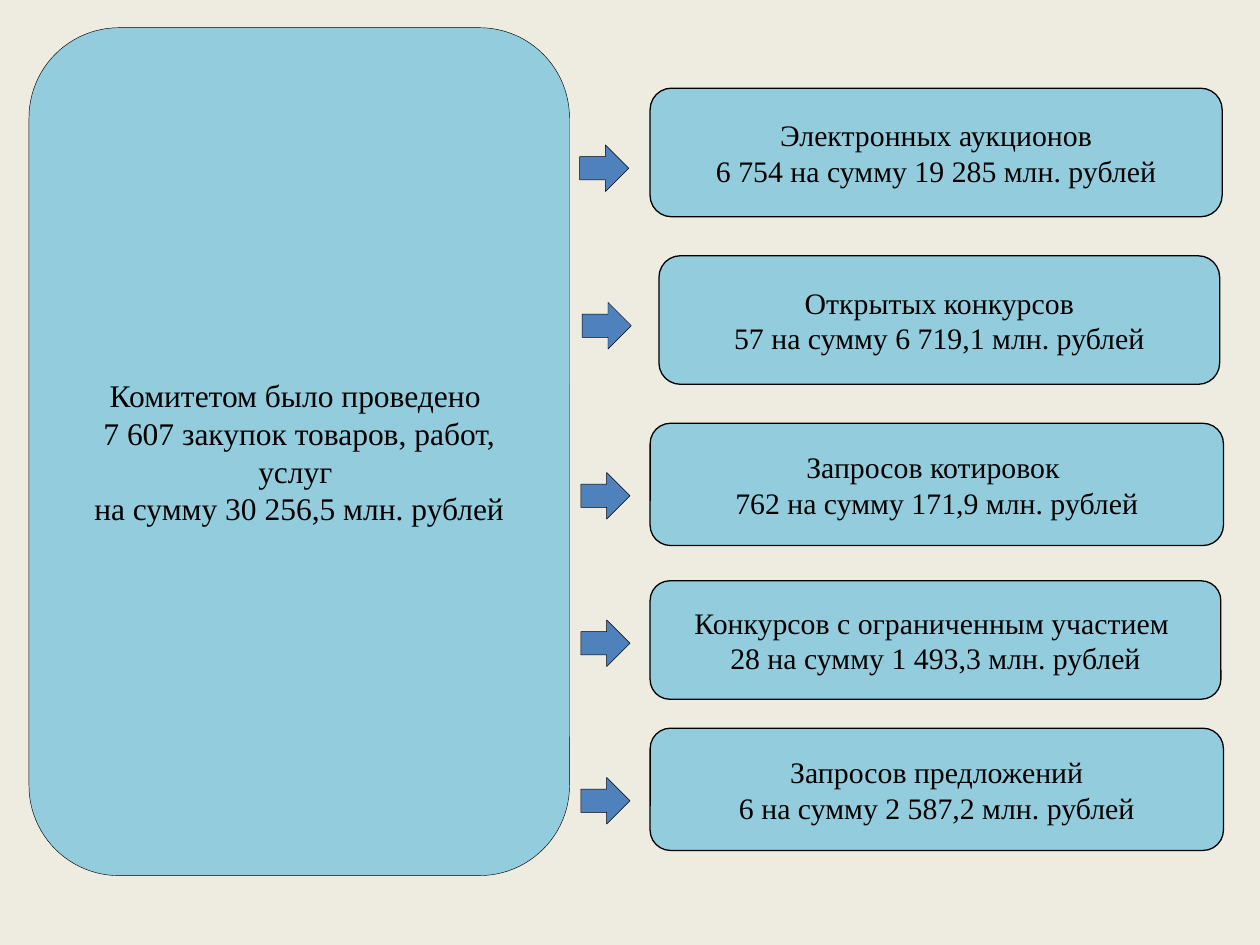
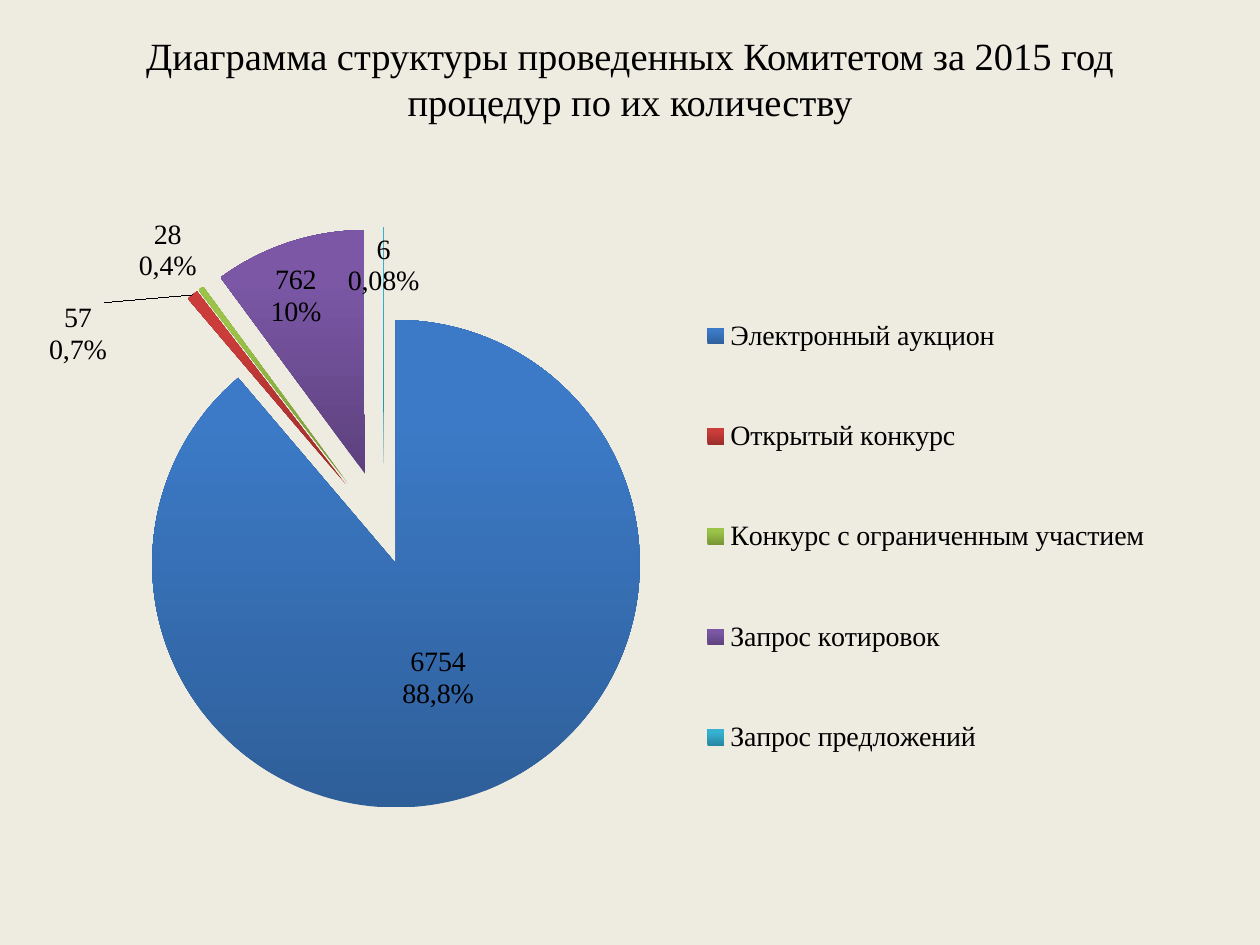
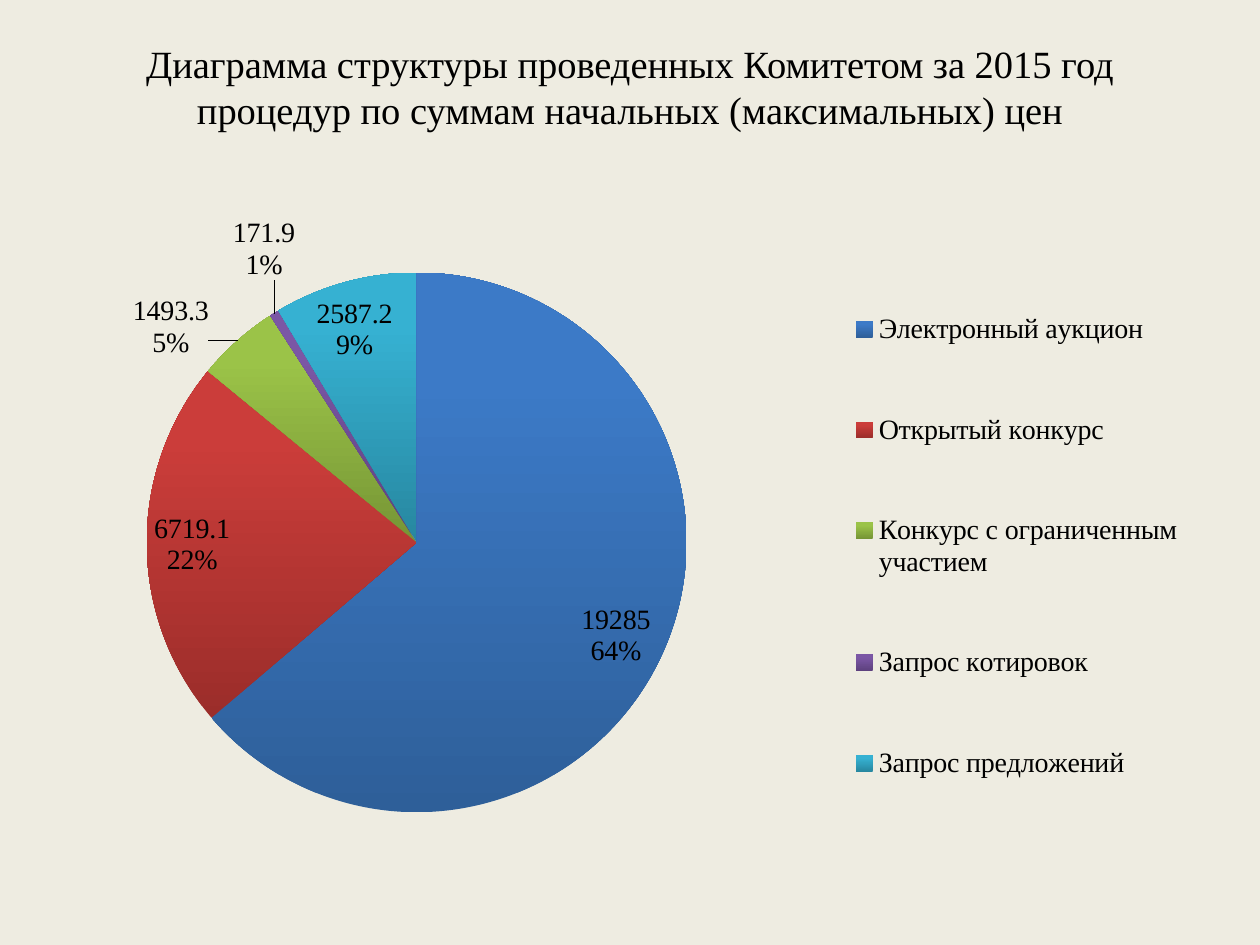
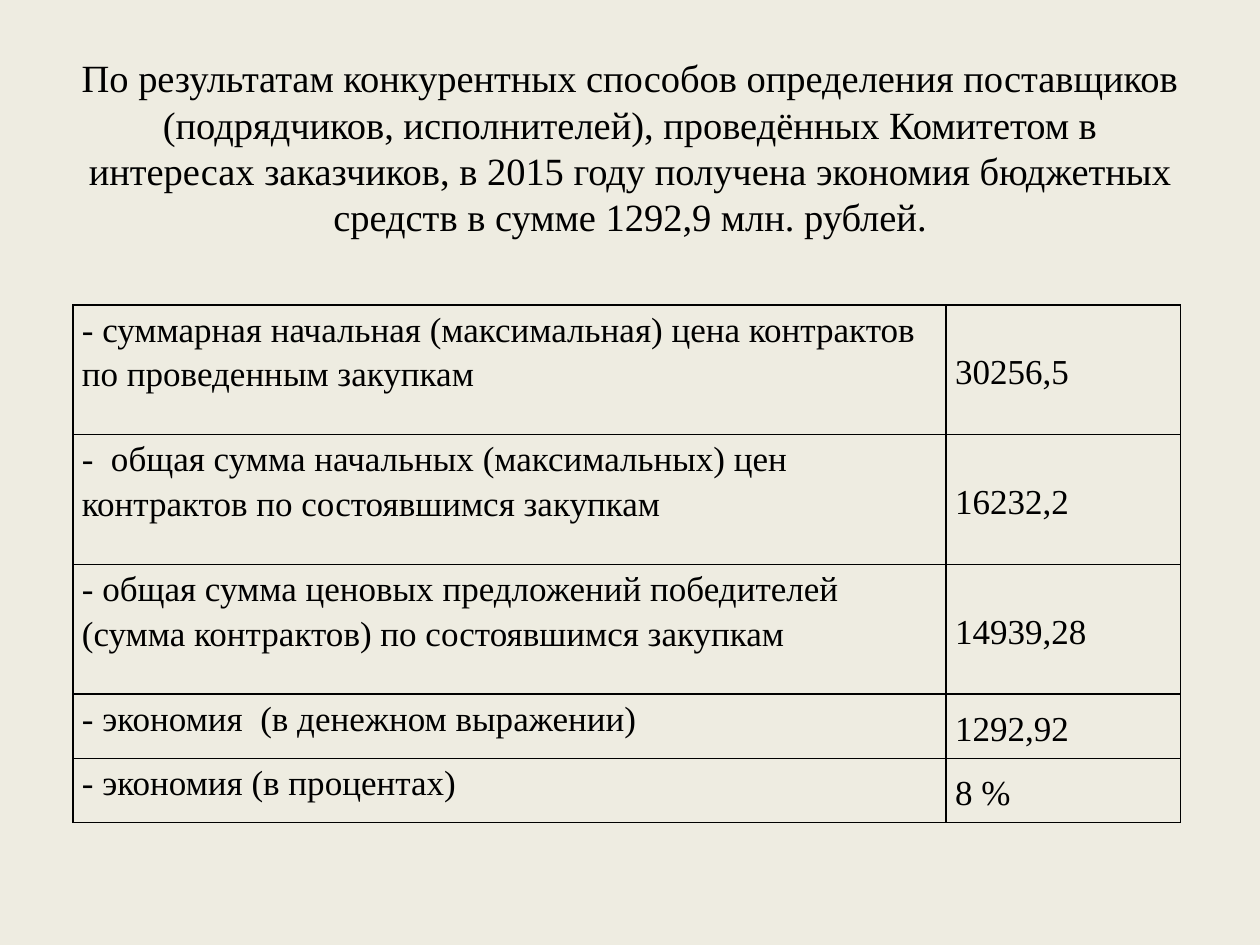
from dataclasses import dataclass

from pptx import Presentation
from pptx.chart.data import CategoryChartData
from pptx.dml.color import RGBColor
from pptx.enum.chart import XL_CHART_TYPE, XL_LABEL_POSITION, XL_LEGEND_POSITION
from pptx.enum.shapes import MSO_SHAPE
from pptx.enum.text import MSO_ANCHOR, MSO_AUTO_SIZE, PP_ALIGN
from pptx.oxml import parse_xml
from pptx.oxml.ns import nsdecls, qn
from pptx.util import Pt

PX = 9144  # 100 px to the inch


@dataclass(frozen=True)
class Theme:
    font: str = "Times New Roman"
    ink: RGBColor = RGBColor.from_string("000000")
    paper: RGBColor = RGBColor.from_string("EEECE1")
    card: RGBColor = RGBColor.from_string("93CDDD")
    arrow: RGBColor = RGBColor.from_string("4F81BD")
    # dark and light end of each slice
    slices: tuple = (("2E5F99", "3C7AC7"), ("9B2D2A", "CB3D3A"), ("769535", "9BC348"),
                     ("5D417E", "7B57A5"), ("2787A0", "36B1D2"))
    title: int = 22
    total: int = 18
    item: int = 17
    chart: int = 16
    table: int = 20


T = Theme()


def write(tf, text, size, align=PP_ALIGN.CENTER, spacing=None):
    """Fill a text frame, one paragraph per line of text."""
    tf.text = text
    for p in tf.paragraphs:
        p.alignment = align
        if spacing:
            p.line_spacing = spacing
        for r in p.runs:
            for name, value in {"name": T.font, "size": Pt(size)}.items():
                setattr(r.font, name, value)
            r.font.color.rgb = T.ink


def set_layout(el, index, percents, target=""):
    """Lay out a chart element: x, y shift it; x, y, w, h place it."""
    for old in el.findall(qn("c:layout")):
        el.remove(old)
    xml = f'<c:layoutTarget val="{target}"/>' if target else ""
    if len(percents) == 4:
        xml += '<c:xMode val="edge"/><c:yMode val="edge"/>'
    xml += "".join(f'<c:{k} val="{v / 100:.4f}"/>' for k, v in zip("xywh", percents))
    el.insert(index, parse_xml(
        f'<c:layout {nsdecls("c")}><c:manualLayout>{xml}</c:manualLayout></c:layout>'))


prs = Presentation()
prs.slide_width, prs.slide_height = 1000 * PX, 750 * PX
fill = prs.slide_master.background.fill
fill.solid()
fill.fore_color.rgb = T.paper
title_only, blank = prs.slide_layouts[5], prs.slide_layouts[6]

# Slide 1: the total and its five parts
s = prs.slides.add_slide(blank)
boxes = [
    (23, 22, 429, 673, T.total, 0.25,
     "Комитетом было проведено \n7 607 закупок товаров, работ, услуг \nна сумму 30 256,5 млн. рублей"),
    (516, 70, 454, 102, T.item, 0.75, "Электронных аукционов\n6 754 на сумму 19 285 млн. рублей"),
    (523, 203, 445, 102, T.item, 0.75, "Открытых конкурсов\n57 на сумму 6 719,1 млн. рублей"),
    (516, 336, 455, 97, T.item, 0.75, "Запросов котировок \n762 на сумму 171,9 млн. рублей"),
    (516, 461, 453, 94, T.item, 0.75,
     "Конкурсов с ограниченным участием \n28 на сумму 1 493,3 млн. рублей"),
    (516, 578, 455, 97, T.item, 0.75, "Запросов предложений\n6 на сумму 2 587,2 млн. рублей"),
]
arrows = [(461, 114), (463, 239), (462, 374), (462, 491), (462, 616)]
shapes = [(MSO_SHAPE.ROUNDED_RECTANGLE, *box, T.card) for box in boxes]
shapes += [(MSO_SHAPE.DOWN_ARROW, x, y, 37, 39, T.item, 0.25, "", T.arrow) for x, y in arrows]
for kind, x, y, w, h, size, line, text, color in shapes:
    sp = s.shapes.add_shape(kind, x * PX, y * PX, w * PX, h * PX)
    sp.shadow.inherit = False
    sp.fill.solid()
    sp.fill.fore_color.rgb = color
    sp.line.color.rgb = T.ink
    sp.line.width = Pt(line)
    if kind == MSO_SHAPE.DOWN_ARROW:
        sp.rotation = 270
        continue
    tf = sp.text_frame
    tf.word_wrap = size == T.total
    tf.vertical_anchor = MSO_ANCHOR.MIDDLE
    write(tf, text, size)

# Slides 2 to 4: titles
titles = [
    (64, "Диаграмма структуры проведенных Комитетом за 2015 год процедур по их количеству"),
    (77, "Диаграмма структуры проведенных Комитетом за 2015 год процедур по суммам "
         "начальных (максимальных) цен"),
    (173, "По результатам конкурентных способов определения поставщиков (подрядчиков, "
          "исполнителей), проведённых Комитетом в интересах заказчиков, в 2015 году получена "
          "экономия бюджетных средств в сумме 1292,9 млн. рублей."),
]
titled = []
for height, text in titles:
    s = prs.slides.add_slide(title_only)
    sp = s.shapes.title
    place = {"left": 50, "top": 30, "width": 900, "height": height}
    for name, value in place.items():
        setattr(sp, name, value * PX)
    tf = sp.text_frame
    for name, value in {"word_wrap": True, "auto_size": MSO_AUTO_SIZE.NONE,
                        "vertical_anchor": MSO_ANCHOR.MIDDLE}.items():
        setattr(tf, name, value)
    write(tf, text, T.title)
    titled.append(s)
count_slide, sum_slide, saving_slide = titled

# Slides 2 and 3: pies, laid out in percent; each label is (position, shift, own text)
CENTER, IN, OUT = (XL_LABEL_POSITION.CENTER, XL_LABEL_POSITION.INSIDE_END,
                   XL_LABEL_POSITION.OUTSIDE_END)
categories = ["Электронный аукцион", "Открытый конкурс", "Конкурс с ограниченным участием",
              "Запрос котировок", "Запрос предложений"]
pies = [
    {"slide": count_slide, "at": (39, 141, 891, 523),
     "series": [(6754, 57, 28, 762, 6), (None,) * 5, (None,) * 5],
     "plot": (1, 7.5, 57.7, 92.5), "legend": (57.6, 11.2, 41, 86.6),
     "explosion": 25, "first_explosion": 14,
     "labels": [(CENTER, None, "6754\n88,8%"), (OUT, (-7.4, 11.6), "57\n0,7%"),
                (OUT, None, "28\n0,4%"), (IN, (-1.8, 2.3), ""), (IN, None, "6\n0,08%")]},
    {"slide": sum_slide, "at": (31, 164, 928, 518),
     "series": [(19285, 6719.1, 1493.3, 171.9, 2587.2)],
     "plot": (9.2, 10.1, 46.2, 82.7), "legend": (68.6, 5.8, 30, 92.5),
     "explosion": 0, "first_explosion": 0,
     "labels": [(IN, (-0.4, 2.3), ""), (IN, None, ""), (OUT, (-2, 3.6), ""),
                (OUT, (2.1, -4), ""), (IN, (-2.6, 1.4), "")]},
]
for pie in pies:
    data = CategoryChartData()
    data.categories = categories
    for n, values in enumerate(pie["series"], 1):
        data.add_series(f"Series {n}", values)
    chart = pie["slide"].shapes.add_chart(
        XL_CHART_TYPE.PIE, *(v * PX for v in pie["at"]), data).chart
    chart.has_title = False
    chart.has_legend = True
    chart.legend.position = XL_LEGEND_POSITION.RIGHT
    chart.legend.include_in_layout = False
    plot = chart.plots[0]
    plot.vary_by_categories = True
    series = plot.series[0]
    ser = series._element

    for point_no, (dark, light) in enumerate(T.slices):
        fill = series.points[point_no].format.fill
        fill.gradient()
        fill.gradient_angle = 90
        for stop, color, position in zip(fill.gradient_stops, (dark, light), (0, 0.8)):
            stop.color.rgb = RGBColor.from_string(color)
            stop.position = position
    if pie["explosion"]:
        first = ser.find(qn("c:dPt"))
        for el, key in ((first, "explosion"), (first.find(qn("c:spPr")), "first_explosion")):
            el.addprevious(parse_xml(f'<c:explosion {nsdecls("c")} val="{pie[key]}"/>'))
    chart.replace_data(data)  # gives every further series the format of the first

    labels = series.data_labels
    for name in ("show_value", "show_percentage"):
        setattr(labels, name, True)
    fonts = [chart.font, chart.legend.font, labels.font]
    for point_no, (position, _, text) in enumerate(pie["labels"]):
        label = series.points[point_no].data_label
        if text:
            write(label.text_frame, text, T.chart)
        else:
            fonts.append(label.font)
        label.position = position
    for font in fonts:
        font.name, font.size = T.font, Pt(T.chart)
        font.color.rgb = T.ink

    for dLbl, (_, shift, _) in zip(ser.iter(qn("c:dLbl")), pie["labels"]):
        dLbl.find(qn("c:showPercent")).set("val", "1")
        if shift:
            set_layout(dLbl, 1, shift)
    for show in list(ser.iter(qn("c:showBubbleSize"))):
        show.addnext(parse_xml(f'<c:separator {nsdecls("c")}>\n</c:separator>'))
    set_layout(next(chart._chartSpace.iter(qn("c:plotArea"))), 0, pie["plot"], "inner")
    set_layout(chart.legend._element, 1, pie["legend"])

# Slide 4: savings table
rows = [
    (103, "- суммарная начальная (максимальная) цена контрактов по проведенным закупкам", "30256,5"),
    (103, "-  общая сумма начальных (максимальных) цен контрактов по состоявшимся закупкам",
     "16232,2"),
    (103, "- общая сумма ценовых предложений победителей (сумма контрактов) "
          "по состоявшимся закупкам", "14939,28"),
    (51, "- экономия  (в денежном выражении)", "1292,92"),
    (51, "- экономия (в процентах)", "8 %"),
]
table = saving_slide.shapes.add_table(len(rows), 2, 58 * PX, 242 * PX, 879 * PX, 411 * PX).table
table.first_row = table.horz_banding = False
for column, width in zip(table.columns, (693, 186)):
    column.width = width * PX
for row, (height, *texts) in zip(table.rows, rows):
    row.height = height * PX
    anchors = (MSO_ANCHOR.TOP, MSO_ANCHOR.MIDDLE)
    for cell, text, anchor in zip(row.cells, texts, anchors):
        margins = {"margin_left": 7, "margin_right": 7, "margin_top": 0, "margin_bottom": 0}
        for name, value in margins.items():
            setattr(cell, name, value * PX)
        cell.vertical_anchor = anchor
        write(cell.text_frame, text, T.table, PP_ALIGN.LEFT, 1.15)
        cell.fill.background()
        tcPr = cell._tc.get_or_add_tcPr()
        for i, side in enumerate("LRTB"):
            tcPr.insert(i, parse_xml(
                f'<a:ln{side} {nsdecls("a")} w="{Pt(1)}"><a:solidFill>'
                f'<a:srgbClr val="{T.ink}"/></a:solidFill></a:ln{side}>'))

prs.save("out.pptx")
